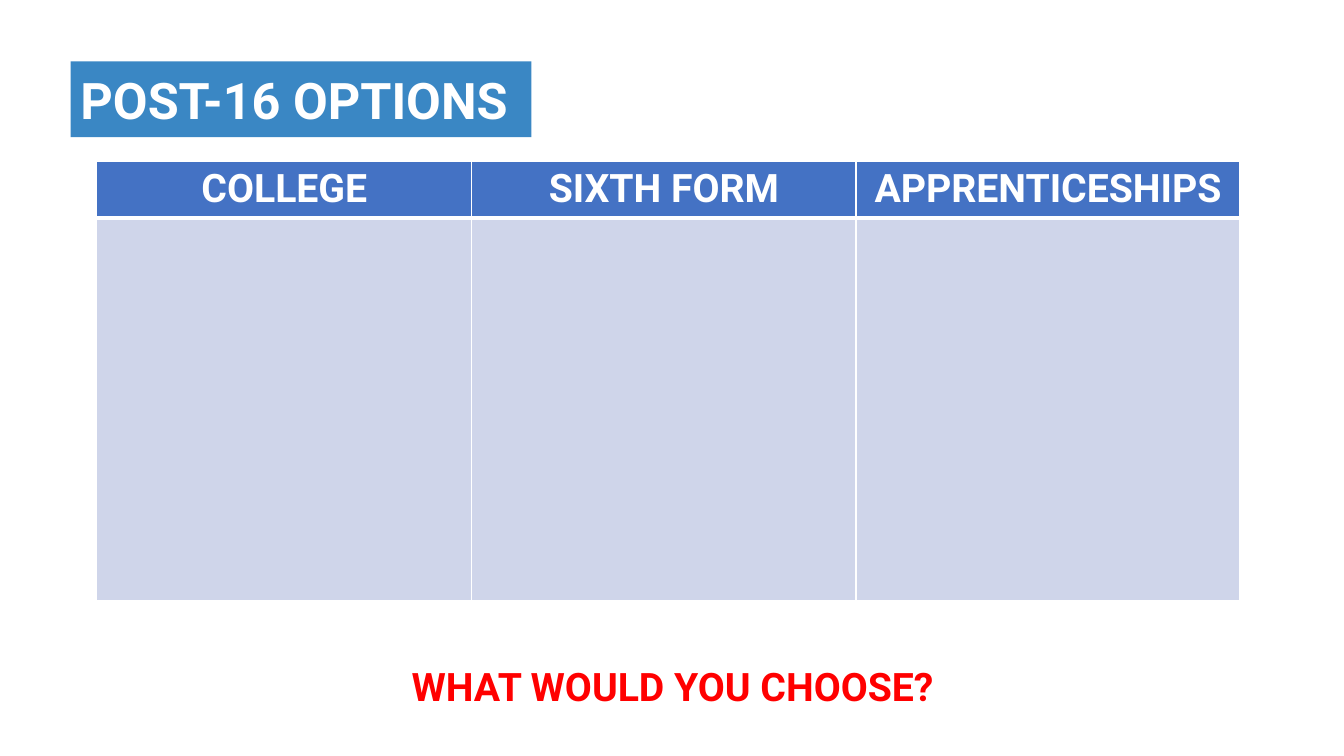
import pptx
import pptx.util
import pptx.dml.color
import pptx.enum.shapes
import pptx.enum.text
import pptx.oxml
import pptx.oxml.ns

Inches = pptx.util.Inches
RGBColor = pptx.dml.color.RGBColor
Align = pptx.enum.text.PP_ALIGN
Anchor = pptx.enum.text.MSO_ANCHOR

WHITE = RGBColor(0xFF, 0xFF, 0xFF)
RED = RGBColor(0xFF, 0x00, 0x00)
BANNER_BLUE = RGBColor(0x3A, 0x87, 0xC4)
HEADER_BLUE = RGBColor(0x44, 0x72, 0xC4)
BODY_BLUE = RGBColor(0xCF, 0xD5, 0xEA)

OPTIONS = ["COLLEGE", "SIXTH FORM", "APPRENTICESHIPS"]
COLUMN_WIDTHS = [3.72, 3.81, 3.81]
ROW_HEIGHTS = [0.56, 3.8]


def write_text(frame, text, size=28, color=WHITE, align=Align.CENTER):
    para = frame.paragraphs[0]
    para.alignment = align
    span = para.add_run()
    span.text = text
    span.font.name = "Roboto"
    span.font.size = pptx.util.Pt(size)
    span.font.bold = True
    span.font.color.rgb = color


def set_borders(cell, bottom_width):
    """Draw white cell borders, 1 pt except for the bottom one."""
    properties = cell._tc.get_or_add_tcPr()
    widths = {"lnL": 1, "lnR": 1, "lnT": 1, "lnB": bottom_width}
    for position, (side, width) in enumerate(widths.items()):
        line = pptx.oxml.parse_xml(
            f'<a:{side} {pptx.oxml.ns.nsdecls("a")} w="{pptx.util.Pt(width)}">'
            f'<a:solidFill><a:srgbClr val="{WHITE}"/></a:solidFill></a:{side}>')
        properties.insert(position, line)


def add_banner(page, left, top, width, height):
    banner = page.shapes.add_shape(
        pptx.enum.shapes.MSO_SHAPE.RECTANGLE,
        Inches(left), Inches(top), Inches(width), Inches(height))
    banner.shadow.inherit = False
    banner.fill.solid()
    banner.fill.fore_color.rgb = BANNER_BLUE
    banner.line.fill.background()
    banner.text_frame.vertical_anchor = Anchor.MIDDLE
    write_text(banner.text_frame, "POST-16 OPTIONS", size=36, align=Align.LEFT)


def add_options_table(page, left, top):
    table = page.shapes.add_table(
        len(ROW_HEIGHTS), len(OPTIONS), Inches(left), Inches(top),
        Inches(sum(COLUMN_WIDTHS)), Inches(sum(ROW_HEIGHTS))).table
    for row, height in zip(table.rows, ROW_HEIGHTS):
        row.height = Inches(height)
    for index, (option, width) in enumerate(zip(OPTIONS, COLUMN_WIDTHS)):
        table.columns[index].width = Inches(width)
        header, body = table.cell(0, index), table.cell(1, index)
        for cell, color, bottom in ((header, HEADER_BLUE, 3), (body, BODY_BLUE, 1)):
            cell.fill.solid()
            cell.fill.fore_color.rgb = color
            set_borders(cell, bottom)
        # The shared edge takes the heavy rule from both sides.
        body._tc.tcPr.find(pptx.oxml.ns.qn("a:lnT")).set("w", str(pptx.util.Pt(3)))
        write_text(header.text_frame, option)


def add_question(page, left, top, width, height):
    box = page.shapes.add_textbox(
        Inches(left), Inches(top), Inches(width), Inches(height))
    box.text_frame.word_wrap = True
    box.text_frame.auto_size = pptx.enum.text.MSO_AUTO_SIZE.SHAPE_TO_FIT_TEXT
    write_text(box.text_frame, "WHAT WOULD YOU CHOOSE?", color=RED)


def main():
    deck = pptx.Presentation()
    deck.slide_width, deck.slide_height = Inches(13.33), Inches(7.5)
    page = deck.slides.add_slide(deck.slide_layouts[6])
    add_options_table(page, 0.96, 1.6)
    add_question(page, 0.72, 6.52, 11.9, 0.57)
    add_banner(page, 0.7, 0.61, 4.57, 0.75)
    deck.save("out.pptx")


if __name__ == "__main__":
    main()
